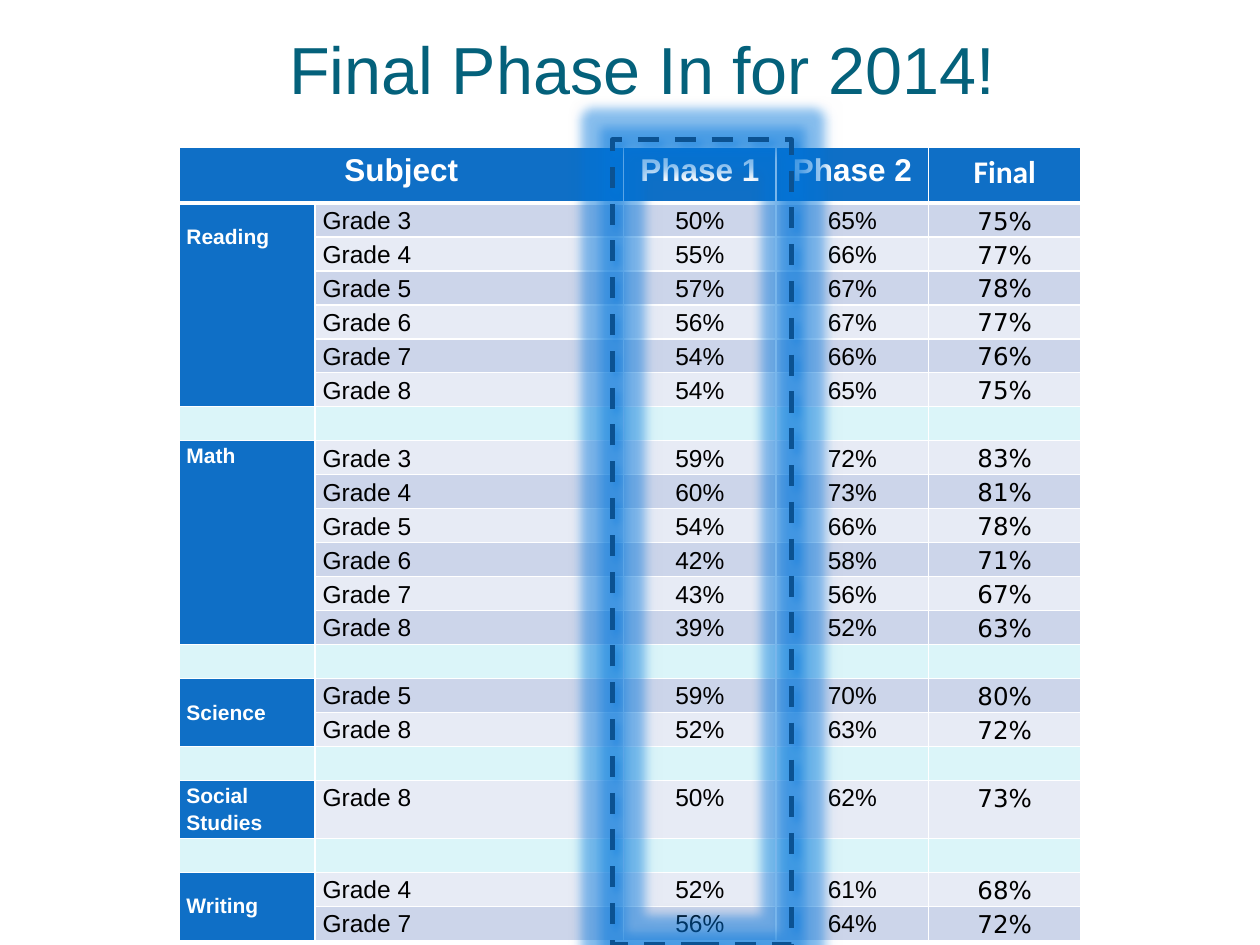
from lxml import etree
from pptx import Presentation
from pptx import util as u
from pptx.dml.color import RGBColor
from pptx.enum import dml, shapes, text
from pptx.oxml import parse_xml
from pptx.oxml.ns import nsdecls, qn

BLUE, WHITE, BLACK = "0F6FC6", "FFFFFF", "000000"
LEFT, CENTER = text.PP_ALIGN.LEFT, text.PP_ALIGN.CENTER


def rgb(value):
    return RGBColor.from_string(value)


def write(tf, words, size, color, font="Arial", bold=False, align=CENTER, **spacing):
    p = tf.paragraphs[0]
    p.alignment = align
    for name, value in spacing.items():
        setattr(p, name, value)
    r = p.add_run()
    r.text = words
    for name, value in {"size": u.Pt(size), "name": font, "bold": bold}.items():
        setattr(r.font, name, value)
    r.font.color.rgb = rgb(color)


header = ["Subject", None, "Phase 1", "Phase 2", "Final"]
subjects = [
    ("Reading", 0.15, [(3, 50, 65, 75), (4, 55, 66, 77), (5, 57, 67, 78),
                       (6, 56, 67, 77), (7, 54, 66, 76), (8, 54, 65, 75)]),
    ("Math", 0, [(3, 59, 72, 83), (4, 60, 73, 81), (5, 54, 66, 78),
                 (6, 42, 58, 71), (7, 43, 56, 67), (8, 39, 52, 63)]),
    ("Science", 0.15, [(5, 59, 70, 80), (8, 52, 63, 72)]),
    ("Social Studies", 0, [(8, 50, 62, 73)]),
    ("Writing", 0.15, [(4, 52, 61, 68), (7, 56, 64, 72)]),
]
rows = 1 + sum(len(grades) for _, _, grades in subjects) + len(subjects) - 1

prs = Presentation()
prs.slide_width, prs.slide_height = u.Inches(10), u.Inches(7.5)
s = prs.slides.add_slide(prs.slide_layouts[6])

title = s.shapes.add_textbox(u.Inches(0.6), u.Inches(0), u.Inches(9), u.Inches(1.08))
tf = title.text_frame
tf.word_wrap = True
tf.vertical_anchor = text.MSO_ANCHOR.MIDDLE
write(tf, "Final Phase In for 2014!", 38, "04617B")

table = s.shapes.add_table(rows, 5, u.Inches(1.42), u.Inches(1.17),
                           u.Inches(7.17), u.Inches(6.27)).table
for column, width in zip(table.columns, [1.08, 2.45, 1.21, 1.21, 1.21]):
    column.width = u.Inches(width)
for row in table.rows:
    row.height = u.Inches(0.27)
table.rows[0].height = u.Inches(0.44)

for i in range(rows):
    for cell in table.rows[i].cells:
        tcPr = cell._tc.get_or_add_tcPr()
        for side in "LRTB":
            heavy = (i, side) in [(0, "B"), (1, "T")]
            tcPr.append(parse_xml(
                f'<a:ln{side} {nsdecls("a")} w="{u.Pt(3 if heavy else 1)}">'
                f'<a:solidFill><a:srgbClr val="{WHITE}"/></a:solidFill></a:ln{side}>'))
        cell.margin_left = cell.margin_right = u.Inches(0.06)
        cell.margin_top = cell.margin_bottom = 0
        cell.fill.solid()
        cell.fill.fore_color.rgb = rgb(BLUE if i == 0 else "CCD5EA" if i % 2 else "E7EBF5")

table.cell(0, 0).merge(table.cell(0, 1))
for j, words in enumerate(header):
    if words:
        write(table.cell(0, j).text_frame, words, 18, WHITE, bold=True, line_spacing=1.15,
              font="Calibri" if words == "Final" else "Arial")

i = 1
for subject, inset, grades in subjects:
    if i > 1:
        for cell in table.rows[i].cells:
            cell.fill.fore_color.rgb = rgb("DBF5F9")
            p = cell.text_frame.paragraphs[0]
            etree.SubElement(p._p, qn("a:endParaRPr"), sz="900")
        i += 1
    cell = table.cell(i, 0)
    if len(grades) > 1:
        cell.merge(table.cell(i + len(grades) - 1, 0))
    else:
        table.rows[i].height = u.Inches(0.46)
    cell.fill.fore_color.rgb = rgb(BLUE)
    cell.margin_top = u.Inches(inset)
    write(cell.text_frame, subject, 12, WHITE, bold=True, align=LEFT,
          line_spacing=1.15, space_after=u.Pt(10))
    for grade, *rates in grades:
        write(table.cell(i, 1).text_frame, f"Grade {grade}", 14, BLACK,
              align=LEFT, line_spacing=1.15)
        for j, rate in enumerate(rates, 2):
            write(table.cell(i, j).text_frame, f"{rate}%", 14, BLACK, line_spacing=1.15,
                  font="DejaVu Sans" if j == 4 else "Arial")
        i += 1

sp = s.shapes.add_shape(shapes.MSO_SHAPE.RECTANGLE, u.Inches(4.86), u.Inches(1.11),
                        u.Inches(1.42), u.Inches(6.39))
sp.fill.background()
sp.line.color.rgb = rgb("0B5292")
sp.line.width = u.Pt(3)
sp.line.dash_style = dml.MSO_LINE.DASH
sp.shadow.inherit = False
effects = sp._element.spPr.find(qn("a:effectLst"))
for tag, attrs, color, alpha in [
    ("glow", f'rad="{u.Pt(11)}"', "0075DB", 40000),
    ("outerShdw", f'blurRad="{u.Pt(4)}" dist="{u.Pt(3)}" dir="2700000"', "0075DB", 50000),
]:
    effects.append(parse_xml(
        f'<a:{tag} {nsdecls("a")} {attrs}><a:srgbClr val="{color}">'
        f'<a:alpha val="{alpha}"/></a:srgbClr></a:{tag}>'))

prs.save("out.pptx")
